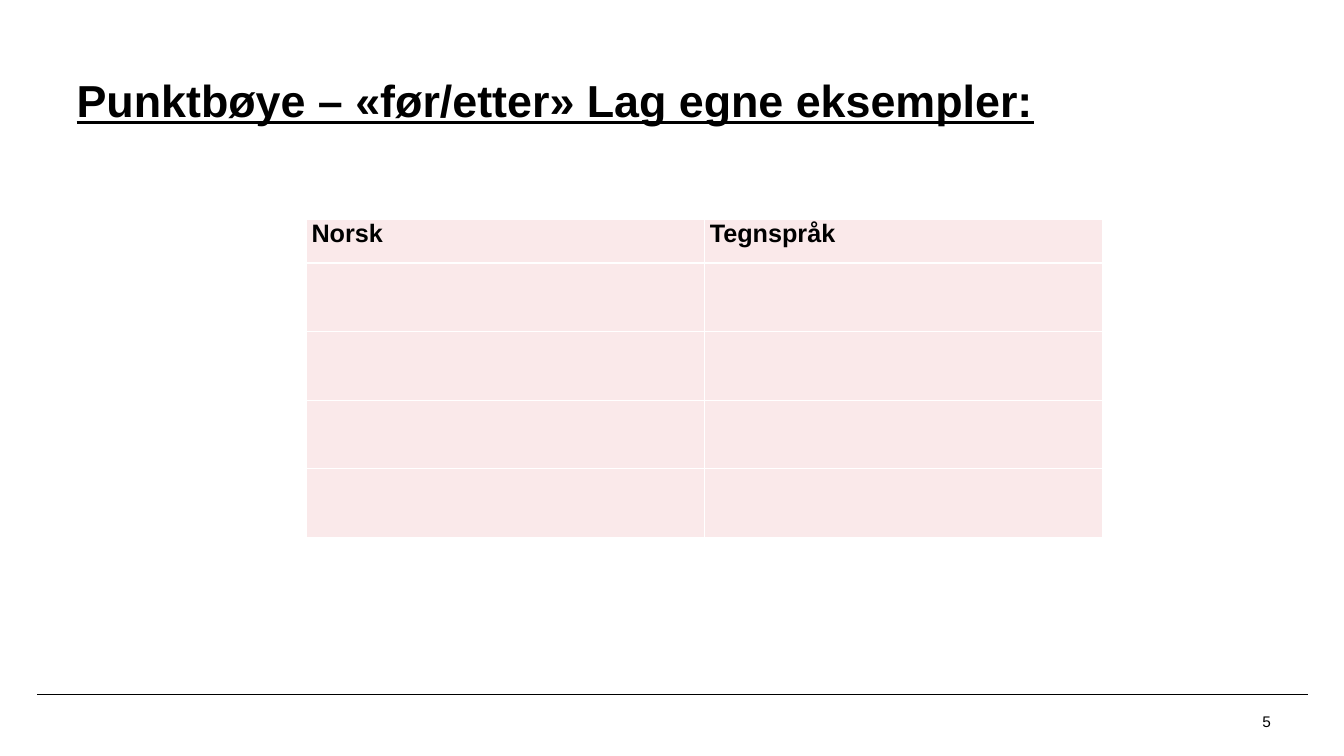
from dataclasses import dataclass

from lxml.etree import SubElement
from pptx import Presentation
from pptx.dml.color import RGBColor
from pptx.enum.shapes import MSO_CONNECTOR
from pptx.enum.text import MSO_ANCHOR, MSO_AUTO_SIZE, PP_ALIGN
from pptx.oxml.ns import qn
from pptx.slide import Slide
from pptx.table import _Cell
from pptx.text.text import TextFrame
from pptx.util import Emu, Pt

SCALE = 9144
COLORS = {"ink": "000000", "grid": "FFFFFF", "cell": "FAE9EA"}
HEADS = ["Norsk", "Tegnspråk"]
ROWS = [43, 68, 68, 68, 68]
COL = 395


@dataclass
class Label:
    """Text with its box in px and its type style."""

    text: str
    box: tuple[int, int, int, int]
    size: int
    bold: bool = False
    under: bool = False


TITLE = Label("Punktbøye – «før/etter» Lag egne eksempler:", (76, 64, 1155, 70), 32, True, True)
NUMBER = Label("5", (1252, 702, 43, 28), 11)


def px(n: int) -> Emu:
    """Turn px into EMU."""
    return Emu(n * SCALE)


def color(name: str) -> RGBColor:
    """Look up a colour."""
    return RGBColor.from_string(COLORS[name])


def add_run(frame: TextFrame, text: str, size: int, bold: bool, under: bool = False) -> None:
    """Add one styled run to the first paragraph."""
    para = frame.paragraphs[0]
    para.alignment = PP_ALIGN.LEFT
    run = para.add_run()
    run.text = text
    font = run.font
    font.name, font.size, font.bold, font.underline = "Arial", Pt(size), bold, under
    font.color.rgb = color("ink")


def put_label(shape, label: Label) -> None:
    """Place a text shape and fill it."""
    shape.left, shape.top, shape.width, shape.height = map(px, label.box)
    frame = shape.text_frame
    frame.word_wrap = True
    frame.auto_size = MSO_AUTO_SIZE.NONE
    frame.vertical_anchor = MSO_ANCHOR.MIDDLE
    frame.margin_left = frame.margin_right = frame.margin_top = frame.margin_bottom = 0
    add_run(frame, label.text, label.size, label.bold, label.under)


def style_cell(cell: _Cell) -> None:
    """Set the margins, borders and fill of a cell."""
    cell.margin_left = cell.margin_right = px(5)
    cell.margin_top = cell.margin_bottom = 0
    props = cell._tc.get_or_add_tcPr()
    for side in ("lnL", "lnR", "lnT", "lnB"):
        edge = SubElement(props, qn(f"a:{side}"), w=str(Pt(1)))
        paint = SubElement(edge, qn("a:solidFill"))
        SubElement(paint, qn("a:srgbClr"), val=COLORS["grid"])
    cell.fill.solid()
    cell.fill.fore_color.rgb = color("cell")


def add_grid(slide: Slide) -> None:
    """Add the table for the examples."""
    width = COL * len(HEADS)
    box = map(px, (304, 218, width, sum(ROWS)))
    table = slide.shapes.add_table(len(ROWS), len(HEADS), *box).table
    table.first_row = table.horz_banding = False
    for col in table.columns:
        col.width = px(COL)
    for row, height in zip(table.rows, ROWS):
        row.height = px(height)
    for cell in table.iter_cells():
        style_cell(cell)
    for cell, head in zip(table.rows[0].cells, HEADS):
        add_run(cell.text_frame, head, 18, True)


def add_rule(slide: Slide) -> None:
    """Add the footer line."""
    ends = map(px, (37, 689, 1297, 689))
    rule = slide.shapes.add_connector(MSO_CONNECTOR.STRAIGHT, *ends)
    rule.line.color.rgb = color("ink")
    rule.line.width = Pt(0.5)
    SubElement(rule._element.spPr, qn("a:effectLst"))


def main() -> None:
    """Build and save the slide."""
    deck = Presentation()
    deck.slide_width, deck.slide_height = px(1333), px(750)
    slide = deck.slides.add_slide(deck.slide_layouts[5])
    add_rule(slide)
    put_label(slide.shapes.title, TITLE)
    put_label(slide.shapes.add_textbox(*map(px, NUMBER.box)), NUMBER)
    add_grid(slide)
    deck.save("out.pptx")


if __name__ == "__main__":
    main()
